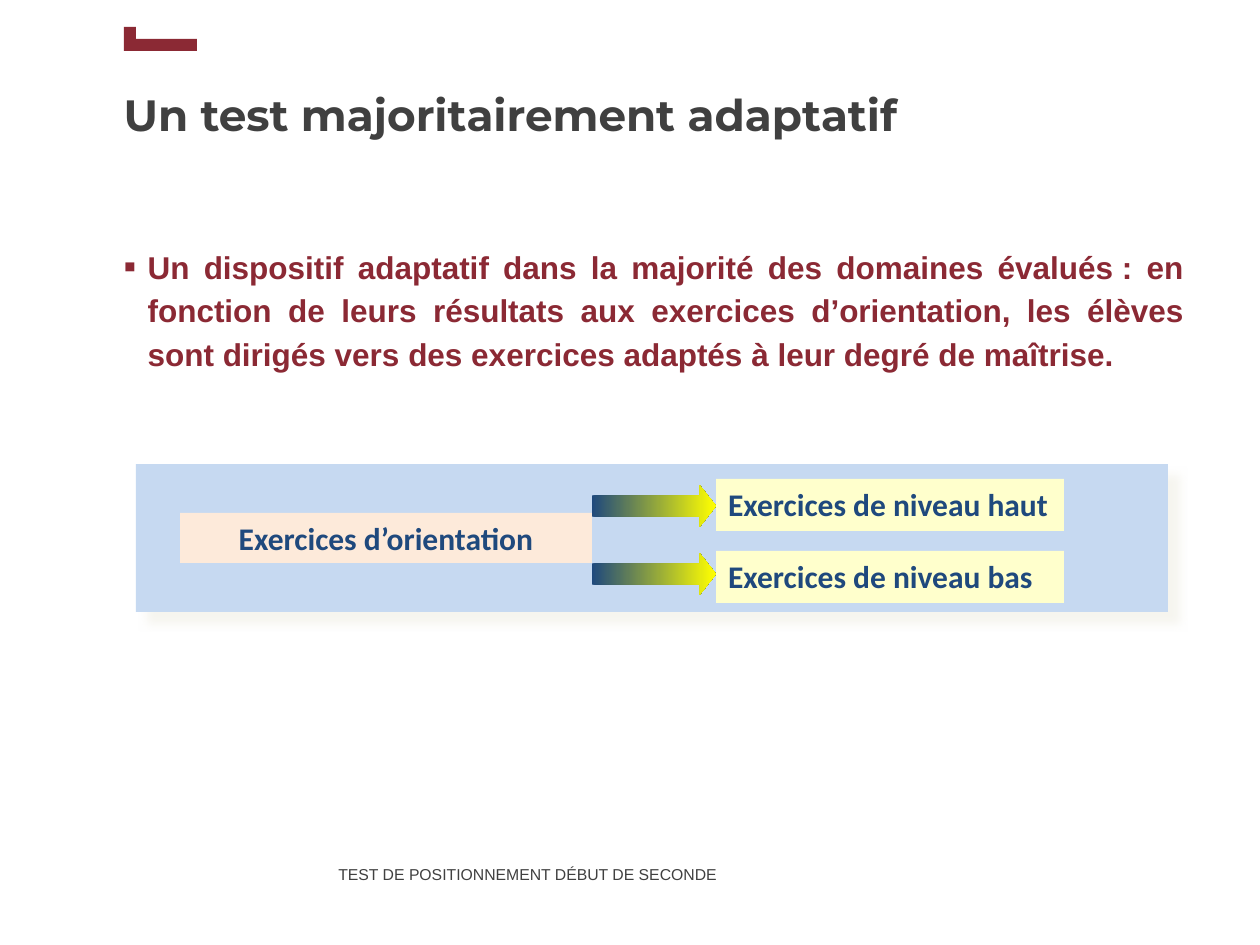
import pptx
import pptx.util
import pptx.dml.color
import pptx.enum.shapes
import pptx.enum.text
import lxml.etree

RGBColor = pptx.dml.color.RGBColor
SHAPES = pptx.enum.shapes.MSO_SHAPE
ALIGN = pptx.enum.text.PP_ALIGN
ANCHOR = pptx.enum.text.MSO_ANCHOR

# Colours
CRIMSON = RGBColor(0x8B, 0x29, 0x34)
DARK_GREY = RGBColor(0x40, 0x40, 0x40)
NAVY = RGBColor(0x1F, 0x49, 0x7D)
YELLOW = RGBColor(0xFF, 0xFF, 0x00)
PALE_YELLOW = RGBColor(0xFF, 0xFF, 0xCC)
PALE_BLUE = RGBColor(0xC6, 0xD9, 0xF1)
PEACH = RGBColor(0xFD, 0xEA, 0xDA)
SHADOW = RGBColor(0xEE, 0xEC, 0xE1)

# Content
TITLE = "Un test majoritairement adaptatif"
BODY = (
    "Un dispositif adaptatif dans la majorité des domaines évalués\u00a0: en fonction de "
    "leurs résultats aux exercices d’orientation, les élèves sont dirigés vers des "
    "exercices adaptés à leur degré de maîtrise."
)
FOOTER = "TEST DE POSITIONNEMENT DÉBUT DE SECONDE"
START = "Exercices d’orientation"
LEVELS = [("Exercices de niveau haut", 479, 485), ("Exercices de niveau bas", 551, 553)]

# Layout in px, 126 to the inch
MARK_BARS = [(124, 27, 12, 24), (130, 39, 67, 12)]
PANEL = (136, 464, 1032, 148)
START_BOX = (180, 513, 412, 50)
LEVEL_LEFT, LEVEL_WIDTH, LEVEL_HEIGHT = 716, 348, 52
ARROW_HEIGHT = 42


def px(value):
    return round(value * 914400 / 126)


def place(shape, *box):
    shape.left, shape.top, shape.width, shape.height = map(px, box)


def add_text(paragraph, text, font, size, color, bold=True):
    run = paragraph.add_run()
    run.text = text
    run.font.name = font
    run.font.size = pptx.util.Pt(size)
    run.font.color.rgb = color
    run.font.bold = bold


def add_plain(shapes, kind, box, color=None):
    shape = shapes.add_shape(kind, *map(px, box))
    shape.line.fill.background()
    shape.shadow.inherit = False
    if color is not None:
        shape.fill.solid()
        shape.fill.fore_color.rgb = color
    return shape


def add_label(shapes, box, color, text, alignment):
    shape = add_plain(shapes, SHAPES.RECTANGLE, box, color)
    frame = shape.text_frame
    frame.word_wrap = True
    frame.margin_left = frame.margin_right = px(12)
    frame.vertical_anchor = ANCHOR.TOP
    frame.paragraphs[0].alignment = alignment
    add_text(frame.paragraphs[0], text, "Calibri", 18, NAVY)


def add_arrow(shapes, box):
    arrow = add_plain(shapes, SHAPES.RIGHT_ARROW, box)
    arrow.adjustments[0], arrow.adjustments[1] = 0.5, 0.39
    arrow.fill.gradient()
    arrow.fill.gradient_angle = 0
    for stop, color, position in zip(arrow.fill.gradient_stops, (NAVY, YELLOW), (0, 1)):
        stop.color.rgb = color
        stop.position = position


def add_shadow(shape):
    effects = shape._element.spPr.find(pptx.oxml.ns.qn("a:effectLst"))
    effects.append(lxml.etree.fromstring(
        '<a:outerShdw xmlns:a="http://schemas.openxmlformats.org/drawingml/2006/main" '
        'blurRad="63500" dist="107950" dir="2700000" algn="tl" rotWithShape="0">'
        f'<a:srgbClr val="{SHADOW}"><a:alpha val="50000"/></a:srgbClr></a:outerShdw>'))


def add_bullet(paragraph):
    properties = paragraph._p.get_or_add_pPr()
    properties.set("marL", str(px(24)))
    properties.set("indent", str(px(-24)))
    color = lxml.etree.SubElement(properties, pptx.oxml.ns.qn("a:buClr"))
    lxml.etree.SubElement(color, pptx.oxml.ns.qn("a:srgbClr"), val=str(CRIMSON))
    lxml.etree.SubElement(properties, pptx.oxml.ns.qn("a:buSzPct"), val="114000")
    lxml.etree.SubElement(properties, pptx.oxml.ns.qn("a:buFont"), typeface="Arial")
    lxml.etree.SubElement(properties, pptx.oxml.ns.qn("a:buChar"), char="▪")


presentation = pptx.Presentation()
presentation.slide_width, presentation.slide_height = px(1260), px(945)
slide = presentation.slides.add_slide(presentation.slide_layouts[1])

# Footer
footer = slide.shapes.add_textbox(*map(px, (326, 847, 489, 93)))
footer.text_frame.word_wrap = True
footer.text_frame.margin_top = px(14)
footer_line = footer.text_frame.paragraphs[0]
footer_line.line_spacing = pptx.util.Pt(13.2)
add_text(footer_line, FOOTER, "Arial", 9, DARK_GREY, bold=False)

# Title
title = slide.shapes.title
place(title, 111, 25, 1086, 178)
title.text_frame.vertical_anchor = ANCHOR.MIDDLE
title.text_frame.paragraphs[0].alignment = ALIGN.LEFT
add_text(title.text_frame.paragraphs[0], TITLE, "Montserrat", 25, DARK_GREY)

# Body
body = slide.placeholders[1]
place(body, 111, 203, 1086, 634)
body.text_frame.auto_size = pptx.enum.text.MSO_AUTO_SIZE.NONE
body.text_frame.margin_top = px(39)
statement = body.text_frame.paragraphs[0]
add_bullet(statement)
statement.alignment = ALIGN.JUSTIFY
statement.line_spacing = 1.15
statement.space_before = pptx.util.Pt(0)
statement.space_after = pptx.util.Pt(10)
add_text(statement, BODY, "Arial", 18, CRIMSON)

# Corner mark
mark = slide.shapes.add_group_shape()
for bar in MARK_BARS:
    add_plain(mark.shapes, SHAPES.RECTANGLE, bar, CRIMSON)

# Diagram: one starting box leads to two levels
diagram = slide.shapes.add_group_shape().shapes
add_shadow(add_plain(diagram, SHAPES.RECTANGLE, PANEL, PALE_BLUE))
add_label(diagram, START_BOX, PEACH, START, ALIGN.CENTER)
arrow_left = START_BOX[0] + START_BOX[2]
for text, box_top, arrow_top in LEVELS:
    add_label(diagram, (LEVEL_LEFT, box_top, LEVEL_WIDTH, LEVEL_HEIGHT),
              PALE_YELLOW, text, ALIGN.LEFT)
    add_arrow(diagram, (arrow_left, arrow_top, LEVEL_LEFT - arrow_left, ARROW_HEIGHT))

presentation.save("out.pptx")
